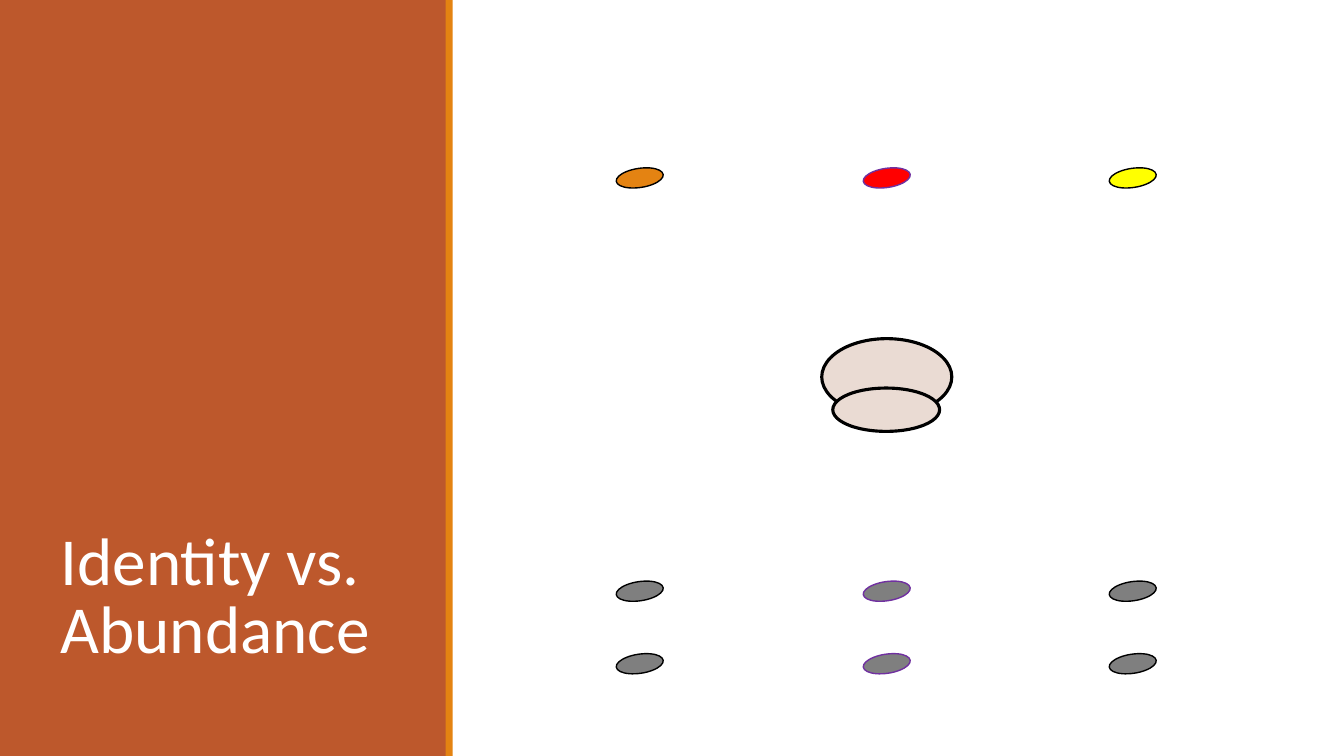
import pptx
import pptx.dml.color
import pptx.enum.shapes
import pptx.enum.text
import pptx.util

RGBColor = pptx.dml.color.RGBColor
Inches = pptx.util.Inches
Pt = pptx.util.Pt
Shape = pptx.enum.shapes.MSO_SHAPE

RUST = RGBColor(0xBD, 0x58, 0x2C)
ORANGE = RGBColor(0xE4, 0x83, 0x12)
RED = RGBColor(0xFF, 0x00, 0x00)
YELLOW = RGBColor(0xFF, 0xFF, 0x00)
GREY = RGBColor(0x7F, 0x7F, 0x7F)
BEIGE = RGBColor(0xEA, 0xDB, 0xD3)
BLACK = RGBColor(0x00, 0x00, 0x00)
PURPLE = RGBColor(0x70, 0x30, 0xA0)
WHITE = RGBColor(0xFF, 0xFF, 0xFF)

SPOT_COLUMNS = (6.11, 8.56, 11)
SPOT_OUTLINES = (BLACK, PURPLE, BLACK)
SPOT_TILT = -8.4


def set_values(target, values):
    for name, value in values.items():
        setattr(target, name, value)


def add_filled(shapes, kind, box, fill, outline=None, weight=1):
    """Add a shape at box (left, top, width, height in inches)."""
    shape = shapes.add_shape(kind, *map(Inches, box))
    shape.shadow.inherit = False
    shape.fill.solid()
    shape.fill.fore_color.rgb = fill
    if outline is None:
        shape.line.fill.background()
    else:
        shape.line.color.rgb = outline
        shape.line.width = Pt(weight)
    return shape


def add_spots(page, tops, fills):
    """Add one group of tilted spots, a row of three at each top."""
    group = page.shapes.add_group_shape()
    for top in tops:
        for left, fill, outline in zip(SPOT_COLUMNS, fills, SPOT_OUTLINES):
            spot = add_filled(group.shapes, Shape.OVAL,
                              (left, top, 0.47, 0.19), fill, outline)
            spot.rotation = SPOT_TILT


def add_shell(page):
    group = page.shapes.add_group_shape()
    for box in ((8.15, 3.36, 1.29, 0.76), (8.26, 3.85, 1.06, 0.43)):
        add_filled(group.shapes, Shape.OVAL, box, BEIGE, BLACK, 2.25)


def add_side_panel(page):
    add_filled(page.shapes, Shape.RECTANGLE, (0, 0, 4.43, 7.5), RUST)
    add_filled(page.shapes, Shape.RECTANGLE, (4.42, 0, 0.07, 7.5), ORANGE)


def format_title(page, text):
    """Fill the title placeholder and bring it in front of the panel."""
    title = page.shapes.title
    set_values(title, {"left": Inches(0.5), "top": Inches(0.65),
                       "width": Inches(3.5), "height": Inches(6.02)})
    frame = title.text_frame
    frame.text = text
    set_values(frame, {
        "word_wrap": True,
        "auto_size": pptx.enum.text.MSO_AUTO_SIZE.NONE,
        "vertical_anchor": pptx.enum.text.MSO_ANCHOR.BOTTOM,
        "margin_left": Inches(0.1), "margin_right": Inches(0.1),
        "margin_top": Inches(0.05), "margin_bottom": Inches(0.05),
    })
    para = frame.paragraphs[0]
    set_values(para, {"alignment": pptx.enum.text.PP_ALIGN.LEFT,
                      "line_spacing": 0.85})
    span = para.runs[0]
    set_values(span.font, {"name": "Calibri", "size": Pt(48)})
    span.font.color.rgb = WHITE
    title.element.getparent().append(title.element)


def main():
    deck = pptx.Presentation()
    set_values(deck, {"slide_width": Inches(13.33),
                      "slide_height": Inches(7.5)})
    page = deck.slides.add_slide(deck.slide_layouts.get_by_name("Title Only"))
    add_side_panel(page)
    format_title(page, "Identity vs. Abundance")
    add_spots(page, (1.67,), (ORANGE, RED, YELLOW))
    add_shell(page)
    add_spots(page, (5.77, 6.49), (GREY, GREY, GREY))
    deck.save("out.pptx")


if __name__ == "__main__":
    main()
